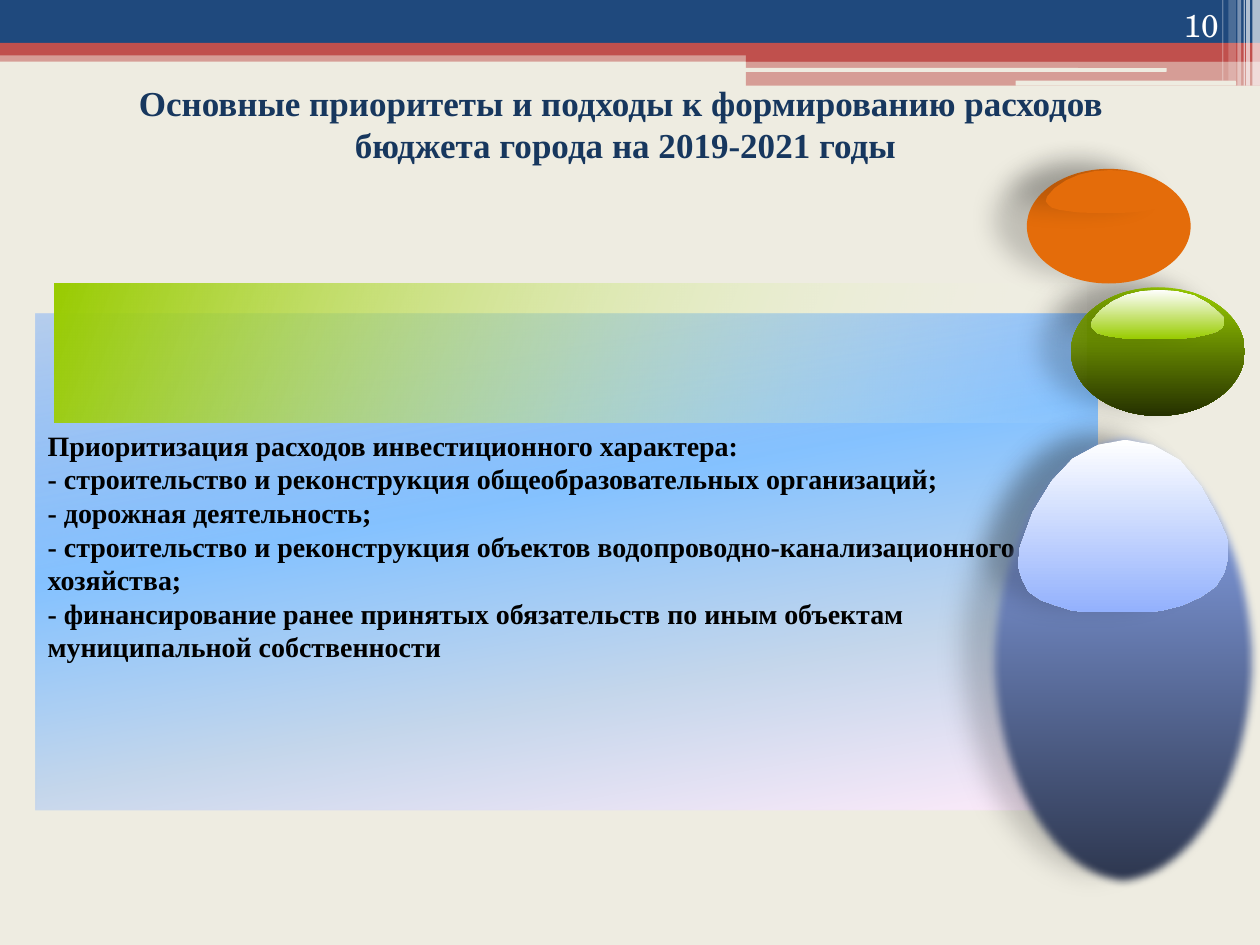
from lxml import etree
from pptx import Presentation
from pptx.dml.color import RGBColor
from pptx.enum.shapes import MSO_SHAPE
from pptx.enum.text import MSO_ANCHOR, PP_ALIGN
from pptx.oxml import parse_xml
from pptx.oxml.ns import nsdecls, qn
from pptx.util import Inches, Pt

RECTANGLE = MSO_SHAPE.RECTANGLE
ROUNDED = MSO_SHAPE.ROUNDED_RECTANGLE
OVAL = MSO_SHAPE.OVAL
LEFT, CENTER, RIGHT = PP_ALIGN.LEFT, PP_ALIGN.CENTER, PP_ALIGN.RIGHT
TOP, BOTTOM = MSO_ANCHOR.TOP, MSO_ANCHOR.BOTTOM
SERIF = "Times New Roman"
NAVY, RED, CREAM, WHITE = "1F497D", "C0504D", "EEECE1", "FFFFFF"
GREEN, BLUE, ORANGE = "99CC00", "93B1FD", "E46C0A"


def paint(shape, stops, angle=0, shadow=False):
    """Fill with (position, colour, opacity) stops in percent; one stop is a solid fill."""
    colours = [
        f'<a:srgbClr val="{colour}"><a:alpha val="{opacity * 1000}"/></a:srgbClr>'
        for _, colour, opacity in stops
    ]
    if len(stops) == 1:
        xml = f'<a:solidFill {nsdecls("a")}>{colours[0]}</a:solidFill>'
    else:
        marks = "".join(
            f'<a:gs pos="{stop[0] * 1000}">{colour}</a:gs>'
            for stop, colour in zip(stops, colours)
        )
        xml = (
            f'<a:gradFill {nsdecls("a")} rotWithShape="1"><a:gsLst>{marks}</a:gsLst>'
            f'<a:lin ang="{angle * 60000}" scaled="0"/></a:gradFill>'
        )
    shape.fill.solid()
    shape.line.fill.background()
    shape.shadow.inherit = False
    properties = shape.element.spPr
    properties.replace(properties.find(qn("a:solidFill")), parse_xml(xml))
    if shadow:
        properties.find(qn("a:effectLst")).append(parse_xml(
            f'<a:outerShdw {nsdecls("a")} blurRad="{Pt(14.5)}" dist="{Pt(19)}" '
            f'dir="{192 * 60000}" algn="ctr" rotWithShape="0">'
            '<a:srgbClr val="000000"><a:alpha val="18000"/></a:srgbClr></a:outerShdw>'
        ))


def add_text(box, lines, size, font, colour, bold=False, align=LEFT, anchor=TOP):
    text_box = slide.shapes.add_textbox(*map(Inches, box))
    frame = text_box.text_frame
    frame.word_wrap = True
    frame.vertical_anchor = anchor
    frame.text = "\n".join(lines)
    for paragraph in frame.paragraphs:
        paragraph.alignment = align
        for run in paragraph.runs:
            run.font.size = Pt(size)
            run.font.name = font
            run.font.bold = bold
            run.font.color.rgb = RGBColor.from_string(colour)
    return frame


presentation = Presentation()
presentation.slide_width = Inches(10)
presentation.slide_height = Inches(7.5)
slide = presentation.slides.add_slide(presentation.slide_layouts[6])
slide.background.fill.solid()
slide.background.fill.fore_color.rgb = RGBColor.from_string(CREAM)

# Header bands and the light stripes at the right edge
header = [
    (RECTANGLE, (0, 0.4, 10, 0.09), RED, 50),
    (RECTANGLE, (0, 0, 10, 0.34), NAVY, 100),
    (RECTANGLE, (0, 0.34, 10, 0.1), RED, 100),
    (RECTANGLE, (5.92, 0.39, 4.08, 0.1), RED, 100),
    (RECTANGLE, (5.92, 0.48, 4.08, 0.2), RED, 50),
    (ROUNDED, (5.91, 0.54, 3.35, 0.03), CREAM, 100),
    (ROUNDED, (8.06, 0.64, 1.75, 0.04), CREAM, 100),
]
stripes = [
    (9.94, 0.06, 0.68, 65), (9.89, 0.03, 0.68, 65), (9.87, 0.01, 0.68, 60),
    (9.82, 0.03, 0.68, 40), (9.75, 0.06, 0.64, 20), (9.7, 0.01, 0.64, 30),
]
for left, width, height, opacity in stripes:
    header.append((RECTANGLE, (left, 0, width, height), WHITE, opacity))
for kind, box, colour, opacity in header:
    band = slide.shapes.add_shape(kind, *map(Inches, box))
    paint(band, [(0, colour, opacity)])

add_text(
    (0.28, 0.6, 9.37, 0.77),
    ["Основные приоритеты и подходы к формированию расходов ",
     "бюджета города на 2019-2021 годы"],
    20, SERIF, "17375E", bold=True, align=CENTER,
)

panel = slide.shapes.add_shape(RECTANGLE, *map(Inches, (0.28, 2.49, 8.43, 3.94)))
paint(panel, [(0, "5E9EFF", 38), (40, "85C2FF", 100),
              (70, "C4D6EB", 100), (100, "FFEBFA", 100)], 80)

add_text((8.94, 0, 0.83, 0.4), ["10"], 18, "TeX Gyre Schola", WHITE,
         align=RIGHT, anchor=BOTTOM)

priorities = add_text(
    (0.28, 3.36, 7.8, 1.96),
    ["Приоритизация расходов инвестиционного характера:",
     "- строительство и реконструкция общеобразовательных организаций;",
     "- дорожная деятельность;",
     "- строительство и реконструкция объектов водопроводно-канализационного хозяйства;",
     "- финансирование ранее принятых обязательств по иным объектам муниципальной собственности"],
    16, SERIF, "000000", bold=True,
)
priorities.margin_right = 0
priorities.margin_top = priorities.margin_bottom = Inches(0.04)

# Glossy balls: an oval with a dome-shaped highlight, outlined in percent of its box
dome = [
    (99, 56), (100, 61), (100, 67), (98, 77), (94, 85), (87, 91), (78, 96),
    (68, 99), (60, 100), (36, 100), (26, 99), (18, 96), (11, 93), (5, 88),
    (2, 81), (0, 73), (1, 62), (7, 42), (16, 24), (26, 11), (38, 3), (51, 0),
    (64, 3), (77, 12), (87, 27), (95, 45),
]
green_ball = ((8.5, 2.28, 1.38, 1.02), [(0, GREEN, 100), (100, "253100", 100)],
              (8.66, 2.3, 1.06, 0.39), [(0, WHITE, 100), (100, GREEN, 100)], 0)
blue_ball = ((7.83, 3.43, 2.17, 3.62), [(0, BLUE, 100), (100, "2B344B", 100)],
             (8.08, 3.49, 1.67, 1.37), [(0, WHITE, 100), (100, BLUE, 100)], 5)
orange_ball = ((8.15, 1.34, 1.3, 0.91), [(0, ORANGE, 100)],
               (8.3, 1.35, 1, 0.34), [(0, ORANGE, 100)], 0)
for oval_box, oval_stops, dome_box, dome_stops, soft_edge in (
        green_ball, blue_ball, orange_ball):
    oval = slide.shapes.add_shape(OVAL, *map(Inches, oval_box))
    paint(oval, oval_stops, 90, shadow=True)
    if soft_edge:
        effects = oval.element.spPr.find(qn("a:effectLst"))
        etree.SubElement(effects, qn("a:softEdge"), rad=str(Pt(soft_edge)))
    left, top, width, height = dome_box
    points = [(Inches(left + width * x / 100), Inches(top + height * y / 100))
              for x, y in dome]
    builder = slide.shapes.build_freeform(*points[0])
    builder.add_line_segments(points[1:], close=True)
    paint(builder.convert_to_shape(), dome_stops, 90, shadow=True)

green_band = slide.shapes.add_shape(RECTANGLE, *map(Inches, (0.43, 2.25, 8.19, 1.1)))
paint(green_band, [(0, WHITE, 0), (100, GREEN, 100)], 200)

presentation.save("out.pptx")
